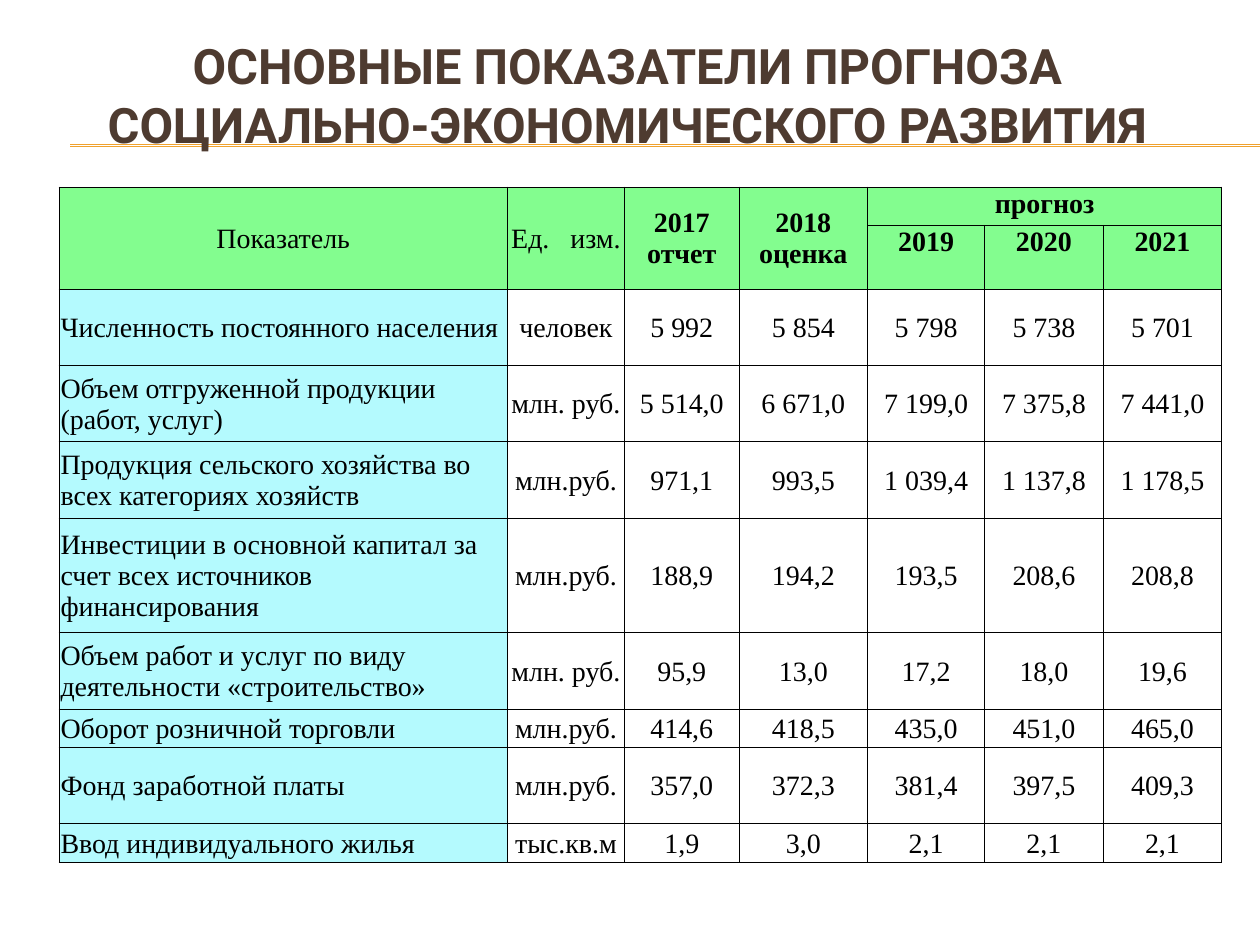
"""Build a slide with a table of socio-economic forecast indicators."""
from lxml.etree import SubElement
from pptx import Presentation
from pptx.dml.color import RGBColor as RGB
from pptx.enum.shapes import MSO_CONNECTOR
from pptx.enum.text import MSO_ANCHOR, MSO_AUTO_SIZE, PP_ALIGN
from pptx.oxml import parse_xml
from pptx.oxml.ns import nsdecls, qn
from pptx.util import Cm, Pt

TITLE = "ОСНОВНЫЕ ПОКАЗАТЕЛИ ПРОГНОЗА СОЦИАЛЬНО-ЭКОНОМИЧЕСКОГО РАЗВИТИЯ"
HEADER = ["Показатель", "Ед. изм.", "2017 отчет", "2018 оценка", "прогноз", "", ""]
FORECAST_YEARS = ["", "", "", "", "2019", "2020", "2021"]
INDICATORS = [
    ["Численность постоянного населения", "человек", "5 992", "5 854", "5 798", "5 738", "5 701"],
    ["Объем отгруженной продукции (работ, услуг)", "млн. руб.",
     "5 514,0", "6 671,0", "7 199,0", "7 375,8", "7 441,0"],
    ["Продукция сельского хозяйства во всех категориях хозяйств", "млн.руб.",
     "971,1", "993,5", "1 039,4", "1 137,8", "1 178,5"],
    ["Инвестиции в основной капитал за счет всех источников финансирования", "млн.руб.",
     "188,9", "194,2", "193,5", "208,6", "208,8"],
    ["Объем работ и услуг по виду деятельности «строительство»", "млн. руб.",
     "95,9", "13,0", "17,2", "18,0", "19,6"],
    ["Оборот розничной торговли", "млн.руб.", "414,6", "418,5", "435,0", "451,0", "465,0"],
    ["Фонд заработной платы", "млн.руб.", "357,0", "372,3", "381,4", "397,5", "409,3"],
    ["Ввод индивидуального жилья", "тыс.кв.м", "1,9", "3,0", "2,1", "2,1", "2,1"],
]
ROWS = [HEADER, FORECAST_YEARS] + INDICATORS
HEADER_ROWS = 2
FORECAST_COL = 4
COL_WIDTHS = [9.04, 2.36, 2.31, 2.59, 2.36, 2.39, 2.39]
ROW_UNITS = [1, 1, 2, 2, 2, 3, 2, 1, 2, 1]
ROW_UNIT = 0.77
RULE_HEIGHTS = [2.92, 2.95]
THEME = {
    "title_font": "Roboto", "title_size": 27.9, "title": "4E3B30",
    "font": "Times New Roman", "size": 16, "text": "000000",
    "rule": "F0A22E", "rule_width": 0.75, "border": "000000", "border_width": 0.5,
    "header": "83FD8F", "indicator": "B4FAFE",
}


def style_font(font, name, size, color, bold):
    font.name, font.size, font.bold = name, Pt(size), bold
    font.color.rgb = RGB.from_string(color)


def add_title(s):
    title = s.shapes.title
    title.left, title.top, title.width, title.height = Cm(0.58), Cm(0), Cm(24.13), Cm(2.34)
    tf = title.text_frame
    tf.text = TITLE
    tf.word_wrap, tf.auto_size = True, MSO_AUTO_SIZE.NONE
    tf.vertical_anchor, tf.margin_top, tf.margin_bottom = MSO_ANCHOR.TOP, Cm(0.72), Cm(0)
    p = tf.paragraphs[0]
    p.alignment = PP_ALIGN.CENTER
    style_font(p.runs[0].font, THEME["title_font"], THEME["title_size"], THEME["title"], True)
    return title


def add_rules(s, title):
    for y in RULE_HEIGHTS:
        rule = s.shapes.add_connector(MSO_CONNECTOR.STRAIGHT, Cm(1.42), Cm(y), Cm(25.4), Cm(y))
        rule.line.color.rgb = RGB.from_string(THEME["rule"])
        rule.line.width = Pt(THEME["rule_width"])
        SubElement(rule._element.spPr, qn("a:effectLst"))
        title._element.addprevious(rule._element)


def add_borders(cell):
    tcPr = cell._tc.get_or_add_tcPr()
    for i, side in enumerate("LRTB"):
        tcPr.insert(i, parse_xml(
            f'<a:ln{side} {nsdecls("a")} w="{Pt(THEME["border_width"])}"><a:solidFill>'
            f'<a:srgbClr val="{THEME["border"]}"/></a:solidFill></a:ln{side}>'))


def fill_cell(cell, text, row, col):
    is_header = row < HEADER_ROWS
    cell.margin_left = cell.margin_right = cell.margin_top = Cm(0.03)
    cell.margin_bottom = Cm(0)
    forecast_header = is_header and col >= FORECAST_COL
    cell.vertical_anchor = MSO_ANCHOR.TOP if forecast_header else MSO_ANCHOR.MIDDLE
    if is_header or col == 0:
        cell.fill.solid()
        cell.fill.fore_color.rgb = RGB.from_string(THEME["header" if is_header else "indicator"])
    else:
        cell.fill.background()
    add_borders(cell)
    p = cell.text_frame.paragraphs[0]
    p.alignment = PP_ALIGN.CENTER if is_header or col else PP_ALIGN.LEFT
    unit_header = row == 0 and col == 1
    for part in text.partition(" ") if unit_header else [text]:
        r = p.add_run()
        r.text = part
        style_font(r.font, THEME["font"], THEME["size"], THEME["text"], is_header and col > 1)
        if part == " ":
            r.font._element.set("spc", "800")


def add_indicator_table(s):
    heights = [n * ROW_UNIT for n in ROW_UNITS]
    frame = s.shapes.add_table(len(ROWS), len(COL_WIDTHS), Cm(1.19), Cm(3.77),
                               Cm(sum(COL_WIDTHS)), Cm(sum(heights)))
    table = frame.table
    table.first_row = table.horz_banding = False
    for column, width in zip(table.columns, COL_WIDTHS):
        column.width = Cm(width)
    for row, height in zip(table.rows, heights):
        row.height = Cm(height)
    for i, values in enumerate(ROWS):
        for j, text in enumerate(values):
            fill_cell(table.cell(i, j), text, i, j)
    for j in range(FORECAST_COL):
        table.cell(0, j).merge(table.cell(1, j))
    table.cell(0, FORECAST_COL).merge(table.cell(0, len(COL_WIDTHS) - 1))


def main():
    prs = Presentation()
    prs.slide_width, prs.slide_height = Cm(25.4), Cm(19.05)
    s = prs.slides.add_slide(prs.slide_layouts[5])
    add_rules(s, add_title(s))
    add_indicator_table(s)
    prs.save("out.pptx")


if __name__ == "__main__":
    main()
